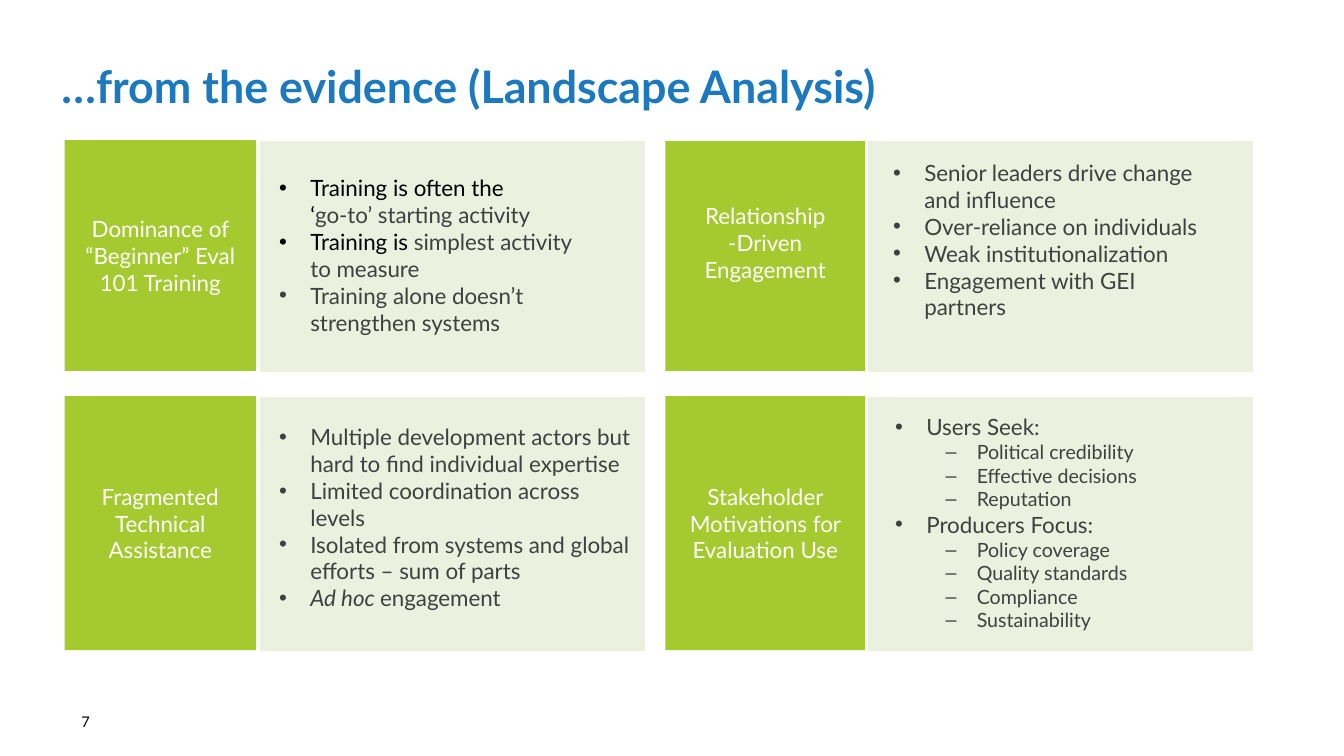
from lxml import etree
from pptx import Presentation
from pptx.dml.color import RGBColor
from pptx.enum.shapes import MSO_SHAPE
from pptx.enum.text import MSO_ANCHOR, MSO_AUTO_SIZE, PP_ALIGN
from pptx.oxml.ns import qn
from pptx.util import Inches, Pt

RECT = MSO_SHAPE.RECTANGLE
MIDDLE = MSO_ANCHOR.MIDDLE
GROW = MSO_AUTO_SIZE.SHAPE_TO_FIT_TEXT
LEFT, CENTER = PP_ALIGN.LEFT, PP_ALIGN.CENTER

FONT = "Lato"
BLUE, GREEN, PALE = "1C79BE", "A4CA2F", "EBF1DE"
BLACK, GREY, WHITE = "000000", "404040", "FFFFFF"

# Panel, label and list boxes: left, top, width, height.
# A list item is (level, runs); a run is (text, colour, italic).
CARDS = [
    {"label": "Dominance of “Beginner” Eval 101 Training",
     "panel": (2.58, 1.4, 3.82, 2.29),
     "tile": (0.64, 1.39, 1.9, 2.29),
     "list": (2.67, 1.68, 3.24, 1.72),
     "items": [
         (0, [("Training is often the \n‘", BLACK, False),
              ("go-to’ starting activity", GREY, False)]),
         (0, [("Training is ", BLACK, False),
              ("simplest activity to measure", GREY, False)]),
         (0, "Training alone doesn’t strengthen systems")]},
    {"label": "Relationship -Driven Engagement",
     "panel": (8.61, 1.4, 3.82, 2.29),
     "tile": (6.6, 1.4, 1.98, 2.28),
     "lift": 0.27,
     "list": (8.76, 1.53, 3.33, 1.99),
     "items": [
         (0, "Senior leaders drive change and influence"),
         (0, "Over-reliance on individuals"),
         (0, "Weak institutionalization"),
         (0, "Engagement with GEI partners")]},
    {"label": "Fragmented Technical Assistance",
     "panel": (2.58, 3.94, 3.82, 2.52),
     "tile": (0.64, 3.93, 1.9, 2.52),
     "list": (2.67, 4.15, 3.76, 2.26),
     "items": [
         (0, "Multiple development actors but hard to find "
             "individual expertise"),
         (0, "Limited coordination across levels"),
         (0, "Isolated from systems and global efforts – sum of parts"),
         (0, [("Ad hoc ", GREY, True), ("engagement", GREY, False)])]},
    {"label": "Stakeholder Motivations for Evaluation Use",
     "panel": (8.61, 3.94, 3.82, 2.52),
     "tile": (6.6, 3.93, 1.98, 2.52),
     "list": (8.78, 4.05, 3.33, 2.29),
     "items": [
         (0, "Users Seek:"),
         (1, "Political credibility"),
         (1, "Effective decisions"),
         (1, "Reputation"),
         (0, "Producers Focus:"),
         (1, "Policy coverage"),
         (1, "Quality standards"),
         (1, "Compliance"),
         (1, "Sustainability")]},
]


def paint(code):
    return RGBColor.from_string(code)


def place(box):
    return [Inches(n) for n in box]


def add_run(para, text, size, color, bold=False, italic=False):
    """Add text to a paragraph, with a line break at each newline."""
    for i, part in enumerate(text.split("\n")):
        if i:
            para.add_line_break()
        run = para.add_run()
        run.text = part
        font = run.font
        font.name, font.size = FONT, Pt(size)
        font.bold, font.italic = bold, italic
        font.color.rgb = paint(color)


def add_rect(slide, box, color):
    rect = slide.shapes.add_shape(RECT, *place(box))
    rect.shadow.inherit = False
    rect.fill.solid()
    rect.fill.fore_color.rgb = paint(color)
    rect.line.fill.background()
    return rect


def add_tile(slide, box, label, lift):
    """Draw a green label; lift raises its text by half that length."""
    frame = add_rect(slide, box, GREEN).text_frame
    frame.word_wrap = True
    frame.vertical_anchor = MIDDLE
    frame.margin_bottom = Inches(0.05 + lift)
    para = frame.paragraphs[0]
    para.alignment = CENTER
    add_run(para, label, 16, WHITE)


def add_box(slide, box):
    frame = slide.shapes.add_textbox(*place(box)).text_frame
    frame.word_wrap = True
    return frame


def set_bullet(para, level):
    para.level = level
    props = para._p.get_or_add_pPr()
    props.set("marL", str(Inches(0.31 + 0.5 * level)))
    props.set("indent", str(Inches(-0.31)))
    etree.SubElement(props, qn("a:buFont")).set("typeface", "Arial")
    etree.SubElement(props, qn("a:buChar")).set("char", "•–"[level])


def add_list(slide, box, items):
    frame = add_box(slide, box)
    frame.auto_size = GROW
    for i, (level, runs) in enumerate(items):
        para = frame.add_paragraph() if i else frame.paragraphs[0]
        set_bullet(para, level)
        if isinstance(runs, str):
            runs = [(runs, GREY, False)]
        for text, color, italic in runs:
            add_run(para, text, 16 - 2 * level, color, italic=italic)


def set_title(slide, text):
    title = slide.shapes.title
    title.left, title.top, title.width, title.height = place(
        (0.61, 0.43, 10.74, 0.83))
    frame = title.text_frame
    frame.margin_left = 0
    frame.vertical_anchor = MIDDLE
    para = frame.paragraphs[0]
    para.alignment = LEFT
    add_run(para, text, 32, BLUE, bold=True)


def add_number(slide, text):
    frame = add_box(slide, (0.71, 6.96, 3, 0.4))
    frame.vertical_anchor = MIDDLE
    add_run(frame.paragraphs[0], text, 10.5, BLACK)


def main():
    deck = Presentation()
    deck.slide_width, deck.slide_height = Inches(13.33), Inches(7.5)
    slide = deck.slides.add_slide(deck.slide_layouts[5])
    set_title(slide, "…from the evidence (Landscape Analysis)")
    for card in CARDS:
        add_rect(slide, card["panel"], PALE)
        add_tile(slide, card["tile"], card["label"], card.get("lift", 0))
        add_list(slide, card["list"], card["items"])
    add_number(slide, "7")
    deck.save("out.pptx")


if __name__ == "__main__":
    main()
